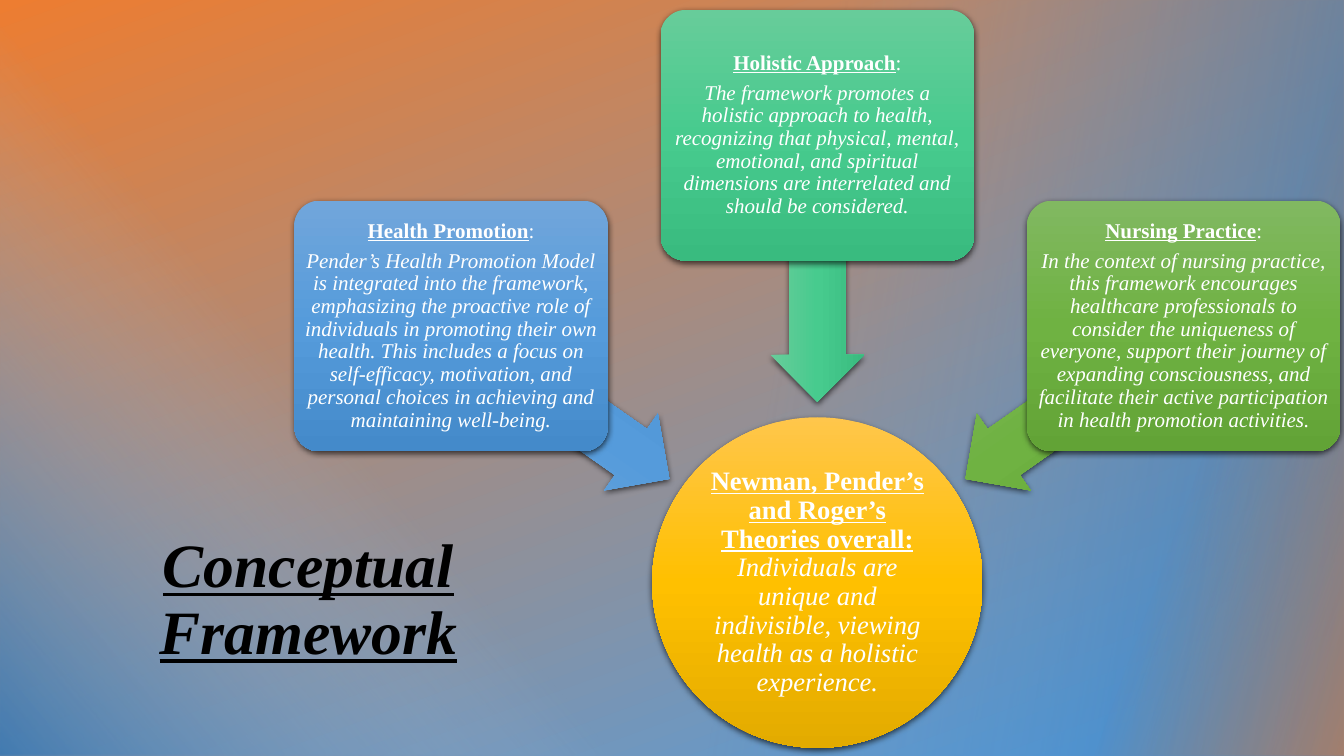
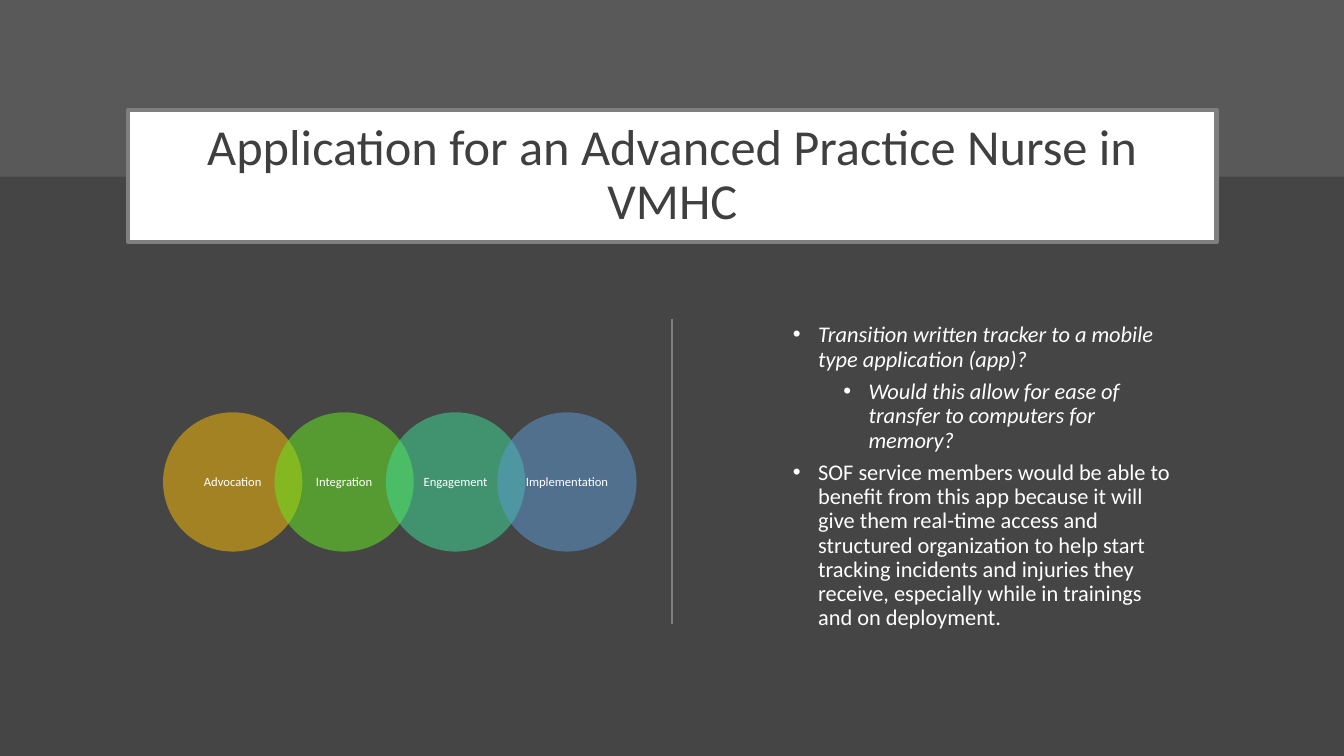
from dataclasses import dataclass
from math import cos, radians, sin

from lxml.etree import SubElement
from pptx import Presentation
from pptx.dml.color import RGBColor
from pptx.enum.shapes import MSO_CONNECTOR, MSO_SHAPE
from pptx.enum.text import MSO_ANCHOR, MSO_AUTO_SIZE, PP_ALIGN
from pptx.oxml.ns import qn
from pptx.util import Cm, Pt


@dataclass(frozen=True)
class Theme:
    width: float = 33.87
    height: float = 19.05
    serif: str = "Times New Roman"
    sans: str = "Calibri"
    black: str = "000000"
    white: str = "FFFFFF"
    ink: str = "3F3F3F"
    page: str = "454545"
    band: str = "595959"
    rule: str = "7F7F7F"
    orange: str = "ED7D31"
    blue: str = "5B9BD5"
    deep_blue: str = "2E75B6"
    pale_blue: str = "9DC3E6"
    gold: str = "FFC000"
    lime: str = "67EF21"
    mint: str = "3FE19B"
    gold_shades: tuple = ("FFC64B", "FFC000", "E3AB00")
    blue_shades: tuple = ("71A6DB", "559BDB", "448ACA")
    mint_shades: tuple = ("67CC9A", "47CB8E", "39BB7F")
    green_shades: tuple = ("81B861", "6FB242", "62A336")
    serif_title_size: int = 44
    sans_title_size: int = 36
    hub_size: int = 19
    card_size: int = 15
    bullet_size: int = 16
    circle_size: int = 9
    line_spacing: float = 0.9


THEME = Theme()
LABEL = {"bold": True, "underline": True}
ITALIC = {"italic": True}
PLAIN = {}


def rgb(color):
    return RGBColor.from_string(color)


def set_opacity(color_element, percent):
    SubElement(color_element, qn("a:alpha")).set("val", str(percent * 1000))


def add_plain_shape(slide, kind, left, top, width, height):
    """Add a shape without outline or shadow; lengths are in centimetres."""
    shape = slide.shapes.add_shape(kind, Cm(left), Cm(top), Cm(width), Cm(height))
    shape.shadow.inherit = False
    shape.line.fill.background()
    return shape


def fill_solid(shape, color, opacity=100):
    shape.fill.solid()
    shape.fill.fore_color.rgb = rgb(color)
    if opacity < 100:
        set_opacity(shape.element.spPr.find(".//" + qn("a:srgbClr")), opacity)


def fill_gradient(shape, stops, angle):
    """Fill with (position, colour, opacity) stops; the angle runs clockwise."""
    shape.fill.gradient()
    shape.fill.gradient_angle = 360 - angle
    stop_list = shape.element.spPr.find(".//" + qn("a:gsLst"))
    stop_list.clear()
    for position, color, opacity in stops:
        stop = SubElement(stop_list, qn("a:gs"), pos=str(position * 1000))
        color_element = SubElement(stop, qn("a:srgbClr"), val=color)
        if opacity < 100:
            set_opacity(color_element, opacity)


def add_glossy_shape(slide, kind, center, size, shades):
    """Add a shaded shape with a soft shadow, placed by its centre."""
    left, top = (middle - length / 2 for middle, length in zip(center, size))
    shape = add_plain_shape(slide, kind, left, top, *size)
    fill_gradient(shape, [(50 * i, shade, 100) for i, shade in enumerate(shades)], 90)
    shadow = SubElement(shape.element.spPr.find(qn("a:effectLst")), qn("a:outerShdw"),
                        blurRad=str(Pt(4.5)), dist=str(Pt(1.5)), dir="5400000",
                        algn="ctr", rotWithShape="0")
    set_opacity(SubElement(shadow, qn("a:srgbClr"), val=THEME.black), 63)
    return shape


def write_paragraph(paragraph, runs, font_name, size, color, space_after=0):
    """Write (text, style) runs that share one font, size and colour."""
    paragraph.line_spacing = THEME.line_spacing
    paragraph.space_before = Pt(0)
    paragraph.space_after = Pt(space_after)
    paragraph.font.name = font_name
    paragraph.font.size = Pt(size)
    paragraph.font.color.rgb = rgb(color)
    for text, style in runs:
        run = paragraph.add_run()
        run.text = text
        for attribute, value in style.items():
            setattr(run.font, attribute, value)


def write_centered(shape, paragraphs, font_name, size, inset, space_after=0):
    """Write white text in the middle of a shape."""
    frame = shape.text_frame
    frame.word_wrap = True
    frame.vertical_anchor = MSO_ANCHOR.MIDDLE
    frame.margin_left = frame.margin_right = Cm(inset)
    frame.margin_top = frame.margin_bottom = Cm(inset)
    for index, runs in enumerate(paragraphs):
        paragraph = frame.add_paragraph() if index else frame.paragraphs[0]
        paragraph.alignment = PP_ALIGN.CENTER
        last = index == len(paragraphs) - 1
        write_paragraph(paragraph, runs, font_name, size, THEME.white,
                        0 if last else space_after)


def place_title(slide, text, box, font_name, size, color, style=PLAIN):
    """Format the title placeholder and bring it in front of the backdrop."""
    title = slide.shapes.title
    title.left, title.top, title.width, title.height = map(Cm, box)
    slide.shapes.element.append(title.element)
    frame = title.text_frame
    frame.word_wrap = True
    frame.auto_size = MSO_AUTO_SIZE.NONE
    frame.vertical_anchor = MSO_ANCHOR.MIDDLE
    paragraph = frame.paragraphs[0]
    paragraph.alignment = PP_ALIGN.CENTER
    write_paragraph(paragraph, [(text, style)], font_name, size, color)
    return title


def add_backdrop(slide):
    layers = [
        (0, THEME.width, 180, 70, [(8, THEME.blue, 100), (100, THEME.orange, 100)]),
        (0, 22.83, 0, 320, [(0, THEME.deep_blue, 79), (40, THEME.pale_blue, 0)]),
        (10.4, 23.47, 0, 190, [(0, THEME.deep_blue, 67), (60, THEME.blue, 0)]),
        (25.36, 8.51, 180, 20, [(0, THEME.orange, 58), (41, THEME.orange, 0)]),
    ]
    for left, width, rotation, angle, stops in layers:
        layer = add_plain_shape(slide, MSO_SHAPE.RECTANGLE, left, 0, width, THEME.height)
        layer.rotation = rotation
        fill_gradient(layer, stops, angle)


def add_spoke(slide, hub_center, angle, shades, heading, text):
    """Add a card on a ray from the hub and the arrow that points inwards."""
    def on_ray(distance):
        return (hub_center[0] + distance * cos(radians(angle)),
                hub_center[1] + distance * sin(radians(angle)))

    arrow = add_glossy_shape(slide, MSO_SHAPE.LEFT_ARROW, on_ray(7.91), (6.71, 2.36), shades)
    arrow.adjustments[0] = 0.6
    arrow.adjustments[1] = 0.5
    arrow.rotation = angle
    card = add_glossy_shape(slide, MSO_SHAPE.ROUNDED_RECTANGLE, on_ray(11.27),
                            (7.9, 6.32), shades)
    card.adjustments[0] = 0.1
    write_centered(card, [[(heading, LABEL), (":", PLAIN)], [(text, ITALIC)]],
                   THEME.serif, THEME.card_size, 0.08, space_after=5)


def build_framework_slide(slide):
    add_backdrop(slide)
    place_title(slide, "Conceptual Framework", (2.11, 13.31, 11.33, 3.68), THEME.serif,
                THEME.serif_title_size, THEME.black, {**LABEL, **ITALIC})
    hub_center = (20.6, 14.68)
    hub = add_glossy_shape(slide, MSO_SHAPE.OVAL, hub_center, (8.33, 8.33),
                           THEME.gold_shades)
    write_centered(hub, [[
        ("Newman, Pender’s and Roger’s Theories overall: ", LABEL),
        ("Individuals are unique and indivisible, viewing health as a holistic "
         "experience.", ITALIC),
    ]], THEME.serif, THEME.hub_size, 0.03)
    spokes = [
        (215, THEME.blue_shades, "Health Promotion",
         "Pender’s Health Promotion Model is integrated into the framework, emphasizing "
         "the proactive role of individuals in promoting their own health. This includes "
         "a focus on self-efficacy, motivation, and personal choices in achieving and "
         "maintaining well-being."),
        (270, THEME.mint_shades, "Holistic Approach",
         "The framework promotes a holistic approach to health, recognizing that "
         "physical, mental, emotional, and spiritual dimensions are interrelated and "
         "should be considered."),
        (325, THEME.green_shades, "Nursing Practice",
         "In the context of nursing practice, this framework encourages healthcare "
         "professionals to consider the uniqueness of everyone, support their journey of "
         "expanding consciousness, and facilitate their active participation in health "
         "promotion activities."),
    ]
    for spoke in spokes:
        add_spoke(slide, hub_center, *spoke)


def add_circle_chain(slide, left, top, diameter, circles):
    """Add a row of translucent circles, each covering a fifth of the one before."""
    for index, (label, color) in enumerate(circles):
        circle = add_plain_shape(slide, MSO_SHAPE.OVAL, left + index * 0.8 * diameter,
                                 top, diameter, diameter)
        fill_solid(circle, color, 50)
        write_centered(circle, [[(label, PLAIN)]], THEME.sans, THEME.circle_size, 0.05)


def add_divider(slide, x, top, bottom):
    divider = slide.shapes.add_connector(MSO_CONNECTOR.STRAIGHT, Cm(x), Cm(top),
                                         Cm(x), Cm(bottom))
    divider.line.color.rgb = rgb(THEME.rule)
    divider.line.width = Pt(1.5)
    SubElement(divider.element.spPr, qn("a:effectLst"))


def add_bullets(slide, box, items):
    """Add a bulleted text box from (level, text, style) items."""
    frame = slide.shapes.add_textbox(*map(Cm, box)).text_frame
    frame.word_wrap = True
    for index, (level, text, style) in enumerate(items):
        paragraph = frame.add_paragraph() if index else frame.paragraphs[0]
        paragraph.level = level
        properties = paragraph._p.get_or_add_pPr()
        properties.set("marL", str(Cm(2.54 + 1.27 * level)))
        properties.set("indent", str(-Cm(0.635)))
        SubElement(properties, qn("a:buFont"), typeface="Arial")
        SubElement(properties, qn("a:buChar"), char="•")
        write_paragraph(paragraph, [(text, style)], THEME.sans, THEME.bullet_size,
                        THEME.white, space_after=6)


def build_application_slide(slide):
    slide.background.fill.solid()
    slide.background.fill.fore_color.rgb = rgb(THEME.page)
    band = add_plain_shape(slide, MSO_SHAPE.RECTANGLE, 0, 0, THEME.width, 4.45)
    fill_solid(band, THEME.band)
    title = place_title(slide, "Application for an Advanced Practice Nurse in VMHC",
                        (3.23, 2.77, 27.43, 3.33), THEME.sans, THEME.sans_title_size,
                        THEME.ink)
    fill_solid(title, THEME.white)
    title.line.color.rgb = rgb(THEME.rule)
    title.line.width = Pt(3)
    add_circle_chain(slide, 4.11, 10.39, 3.51, [
        ("Advocation", THEME.gold),
        ("Integration", THEME.lime),
        ("Engagement", THEME.mint),
        ("Implementation", THEME.blue),
    ])
    add_divider(slide, 16.94, 8.03, 15.72)
    add_bullets(slide, (17.83, 8.03, 11.91, 8.23), [
        (0, "Transition written tracker to a mobile type application (app)?", ITALIC),
        (1, "Would this allow for ease of transfer to computers for memory?", ITALIC),
        (0, "SOF service members would be able to benefit from this app because it will "
            "give them real-time access and structured organization to help start "
            "tracking incidents and injuries they receive, especially while in trainings "
            "and on deployment.", PLAIN),
    ])


def main():
    presentation = Presentation()
    presentation.slide_width = Cm(THEME.width)
    presentation.slide_height = Cm(THEME.height)
    title_only = presentation.slide_layouts[5]
    for build_slide in (build_framework_slide, build_application_slide):
        build_slide(presentation.slides.add_slide(title_only))
    presentation.save("out.pptx")


if __name__ == "__main__":
    main()
